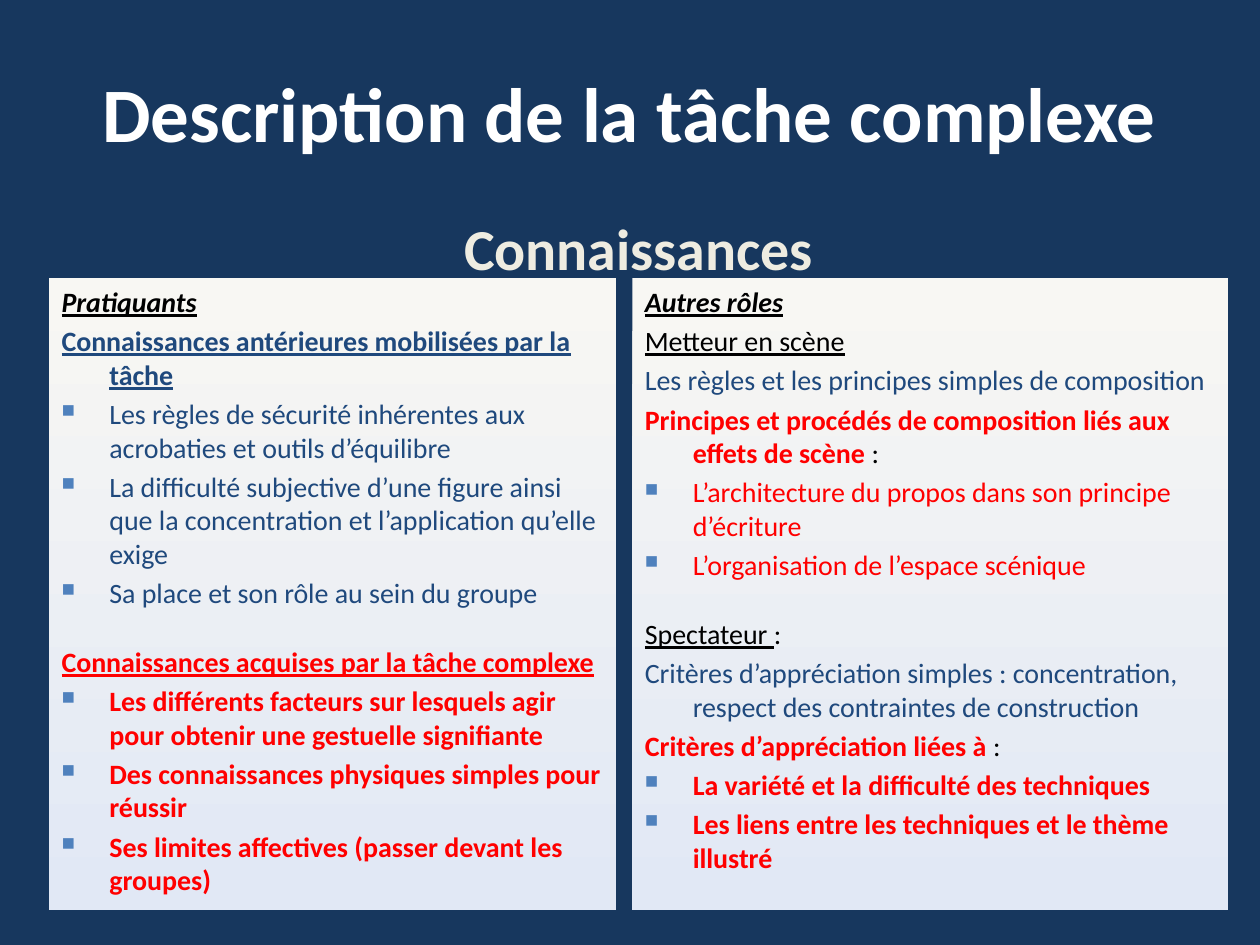
from lxml.etree import SubElement
from pptx import Presentation
from pptx.dml.color import RGBColor
from pptx.enum.shapes import MSO_SHAPE
from pptx.enum.text import MSO_ANCHOR, PP_ALIGN
from pptx.oxml.ns import qn
from pptx.util import Pt

PX = 9144  # 100 px to the inch
NAVY = RGBColor(0x17, 0x37, 0x5E)
WHITE = RGBColor(0xFF, 0xFF, 0xFF)
CREAM = RGBColor(0xEE, 0xEC, 0xE1)
BLACK = RGBColor(0x00, 0x00, 0x00)
BLUE = RGBColor(0x1F, 0x49, 0x7D)
RED = RGBColor(0xFF, 0x00, 0x00)
PANEL_TOP = RGBColor(0xF8, 0xF7, 0xF3)
PANEL_BOTTOM = RGBColor(0xE1, 0xE8, 0xF5)
BULLET_COLOR = "4F81BD"
INDENT = 38
GAP = Pt(3.2)
SECTION_GAP = Pt(20)


def set_hanging(paragraph, bullet):
    properties = paragraph._p.get_or_add_pPr()
    properties.set("marL", str(INDENT * PX))
    properties.set("indent", str(-INDENT * PX))
    if bullet:
        color = SubElement(properties, qn("a:buClr"))
        SubElement(color, qn("a:srgbClr"), val=BULLET_COLOR)
        SubElement(properties, qn("a:buSzPct"), val="65000")
        SubElement(properties, qn("a:buChar"), char="■")
    else:
        SubElement(properties, qn("a:buNone"))


def format_run(run, size, color, style):
    font = run.font
    font.name = "Calibri"
    font.size = Pt(size)
    font.color.rgb = color
    font.bold = "b" in style
    font.italic = "i" in style
    font.underline = "u" in style


presentation = Presentation()
presentation.slide_width = 1000 * PX
presentation.slide_height = 750 * PX
slide = presentation.slides.add_slide(presentation.slide_layouts[1])
slide.background.fill.solid()
slide.background.fill.fore_color.rgb = NAVY

# Title and subtitle
title, subtitle = slide.placeholders
headings = [
    (title, "Description de la tâche complexe", (50, 26, 900, 125), 44, WHITE, MSO_ANCHOR.MIDDLE),
    (subtitle, "Connaissances", (39, 164, 936, 57), 33.1, CREAM, MSO_ANCHOR.TOP),
]
for shape, text, box, size, color, anchor in headings:
    shape.left, shape.top, shape.width, shape.height = [value * PX for value in box]
    text_frame = shape.text_frame
    text_frame.text = text
    text_frame.vertical_anchor = anchor
    paragraph = text_frame.paragraphs[0]
    if shape is subtitle:
        set_hanging(paragraph, bullet=False)
    paragraph.alignment = PP_ALIGN.CENTER
    paragraph.space_before = Pt(0)
    format_run(paragraph.runs[0], size, color, "b")

# Panel contents: (kind of paragraph, runs of text, colour, style)
performers = [
    ("text", [("Pratiquants", BLACK, "biu")]),
    ("text", [("Connaissances antérieures mobilisées par la tâche", BLUE, "bu")]),
    ("bullet", [("Les règles de sécurité inhérentes aux acrobaties et outils d’équilibre", BLUE, "")]),
    ("bullet", [("La difficulté subjective d’une figure ainsi que la concentration "
                 "et l’application qu’elle exige", BLUE, "")]),
    ("bullet", [("Sa place et son rôle au sein du groupe", BLUE, "")]),
    ("section", [("Connaissances acquises par la tâche complexe", RED, "bu")]),
    ("bullet", [("Les différents facteurs sur lesquels agir pour obtenir une gestuelle signifiante", RED, "b")]),
    ("bullet", [("Des connaissances physiques simples pour réussir", RED, "b")]),
    ("bullet", [("Ses limites affectives (passer devant les groupes)", RED, "b")]),
]
other_roles = [
    ("text", [("Autres rôles", BLACK, "biu")]),
    ("text", [("Metteur en scène", BLACK, "u")]),
    ("text", [("Les règles et les principes simples de composition", BLUE, "")]),
    ("text", [("Principes et procédés de composition liés aux effets de scène ", RED, "b"), (":", BLACK, "")]),
    ("bullet", [("L’architecture du propos dans son principe d’écriture", RED, "")]),
    ("bullet", [("L’organisation de l’espace scénique", RED, "")]),
    ("section", [("Spectateur ", BLACK, "u"), (":", BLACK, "")]),
    ("text", [("Critères d’appréciation simples : concentration, "
               "respect des contraintes de construction", BLUE, "")]),
    ("text", [("Critères d’appréciation liées à ", RED, "b"), (":", BLACK, "")]),
    ("bullet", [("La variété et la difficulté des techniques", RED, "b")]),
    ("bullet", [("Les liens entre les techniques et le thème illustré", RED, "b")]),
]

# Two gradient panels
for left, width, content in [(39, 450, performers), (502, 473, other_roles)]:
    panel = slide.shapes.add_shape(MSO_SHAPE.RECTANGLE, left * PX, 221 * PX, width * PX, 501 * PX)
    panel.shadow.inherit = False
    panel.line.fill.background()
    panel.fill.gradient()
    panel.fill.gradient_angle = 270
    for stop, color in zip(panel.fill.gradient_stops, (PANEL_TOP, PANEL_BOTTOM)):
        stop.color.rgb = color

    text_frame = panel.text_frame
    text_frame.word_wrap = True
    text_frame.vertical_anchor = MSO_ANCHOR.TOP
    for index, (kind, runs) in enumerate(content):
        paragraph = text_frame.add_paragraph() if index else text_frame.paragraphs[0]
        set_hanging(paragraph, bullet=kind == "bullet")
        paragraph.alignment = PP_ALIGN.LEFT
        if index:
            paragraph.space_before = SECTION_GAP if kind == "section" else GAP
        for text, color, style in runs:
            run = paragraph.add_run()
            run.text = text
            format_run(run, 16, color, style)

presentation.save("out.pptx")
